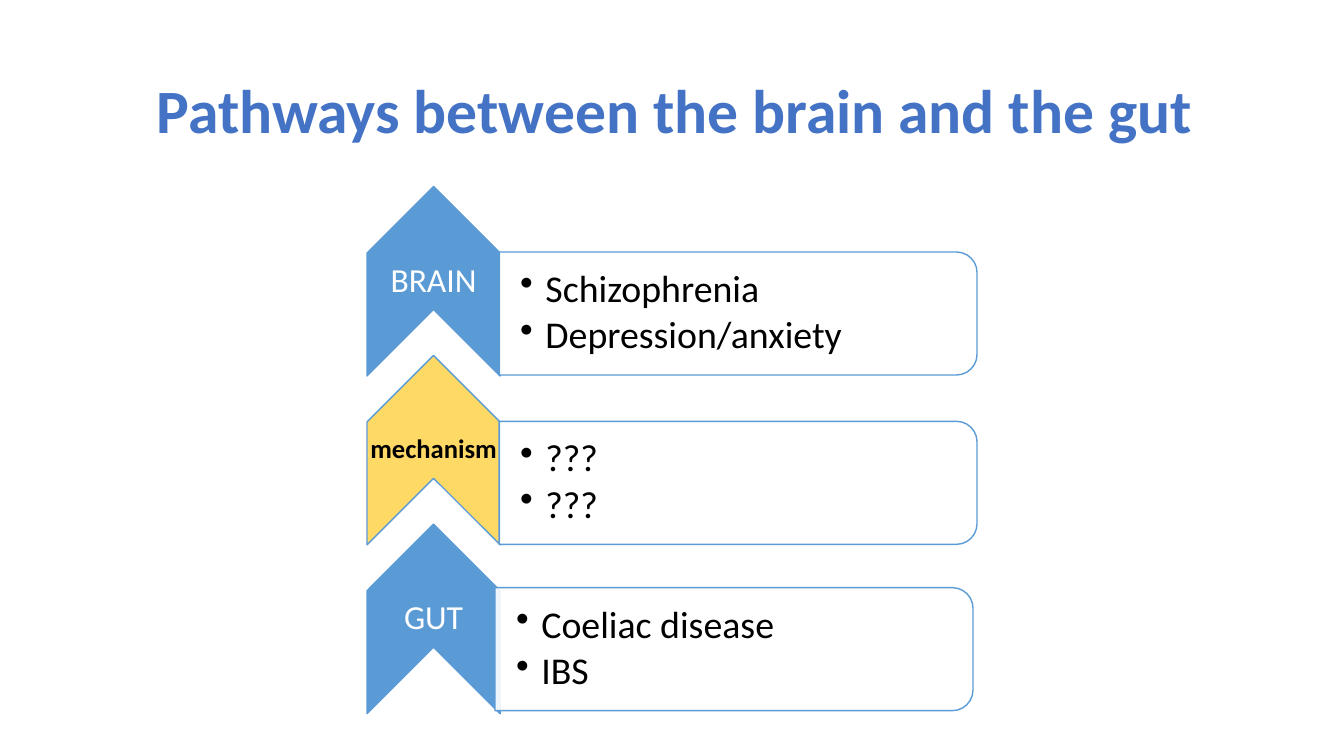
import pptx
import pptx.dml.color
import pptx.enum.shapes
import pptx.enum.text
import pptx.oxml.ns
import pptx.util
from lxml import etree
from pptx.util import Inches, Pt

COLORS = {
    "title": "4472C4", "blue": "5B9BD5", "yellow": "FFD966",
    "white": "FFFFFF", "black": "000000",
}
SHAPES = pptx.enum.shapes.MSO_SHAPE
ALIGN = pptx.enum.text.PP_ALIGN

deck = pptx.Presentation()
deck.slide_width, deck.slide_height = Inches(13.33), Inches(7.5)
page = deck.slides.add_slide(deck.slide_layouts[6])


def add_block(preset, center_x, center_y, width, height, rotation, fill):
    """Add an outlined preset shape, placed by its centre."""
    block = page.shapes.add_shape(
        preset, Inches(center_x - width / 2), Inches(center_y - height / 2),
        Inches(width), Inches(height))
    block.rotation = rotation
    block.shadow.inherit = False
    block.fill.solid()
    block.fill.fore_color.rgb = pptx.dml.color.RGBColor.from_string(COLORS[fill])
    block.line.color.rgb = pptx.dml.color.RGBColor.from_string(COLORS["blue"])
    block.line.width = Pt(1)
    return block


def add_text(place, text, size, color, bold=False, margins=(0.02, 0.02), bullets=False):
    """Add a text box; margins are the left one and the other three."""
    box = page.shapes.add_textbox(*[Inches(length) for length in place])
    frame = box.text_frame
    frame.word_wrap = True
    frame.vertical_anchor = pptx.enum.text.MSO_ANCHOR.MIDDLE
    frame.margin_left = Inches(margins[0])
    frame.margin_top = frame.margin_right = frame.margin_bottom = Inches(margins[1])
    frame.text = text
    for para in frame.paragraphs:
        para.line_spacing = 0.9
        if bullets:
            para.space_after = Pt(4)
            properties = para._p.get_or_add_pPr()
            properties.set("marL", str(Inches(0.25)))
            properties.set("indent", str(-Inches(0.25)))
            bullet = etree.SubElement(properties, pptx.oxml.ns.qn("a:buChar"))
            bullet.set("char", "•")
        else:
            para.alignment = ALIGN.CENTER
        para.font.name = "Calibri"
        para.font.size = Pt(size)
        para.font.bold = bold
        para.font.color.rgb = pptx.dml.color.RGBColor.from_string(COLORS[color])


add_text((0.92, 0.4, 11.5, 1.45), "Pathways between the brain and the gut",
         44, "title", bold=True, margins=(0.1, 0.05))

# Label, size, bold, text colour, chevron fill, bullets, panel centre
stages = [
    ("BRAIN", 24, False, "white", "blue", "Schizophrenia\nDepression/anxiety", (7.32, 3.11)),
    ("mechanism", 19, True, "black", "yellow", "???\n???", (7.32, 4.79)),
    ("GUT", 24, False, "white", "blue", "Coeliac disease\nIBS", (7.28, 6.44)),
]
for index, (label, size, bold, color, fill, items, panel_center) in enumerate(stages):
    center_y = 2.79 + 1.675 * index
    add_block(SHAPES.CHEVRON, 4.3, center_y, 1.88, 1.32, 270, fill)
    add_text((3.64, center_y - 0.28, 1.32, 0.56), label, size, color, bold,
             margins=(0.01, 0.01))

    panel_x, panel_y = panel_center
    panel = add_block(SHAPES.ROUND_2_SAME_RECTANGLE, panel_x, panel_y, 1.22, 4.74, 90, "white")
    panel_color = panel.fill._xPr.find(".//" + pptx.oxml.ns.qn("a:srgbClr"))
    etree.SubElement(panel_color, pptx.oxml.ns.qn("a:alpha")).set("val", "90000")
    add_text((panel_x - 2.37, panel_y - 0.55, 4.68, 1.1), items, 27, "black",
             margins=(0.21, 0.02), bullets=True)

deck.save("out.pptx")
